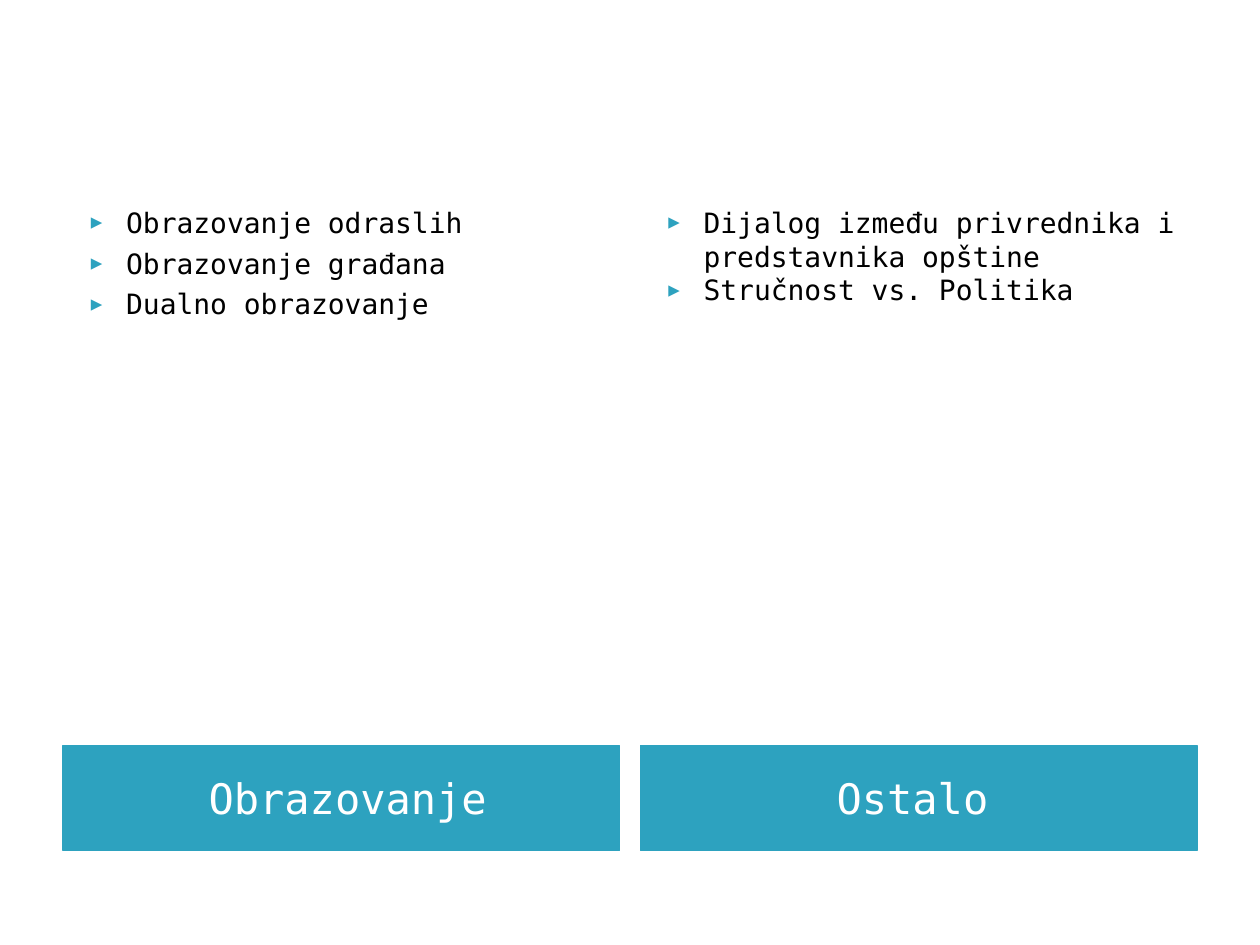
from lxml import etree
from pptx import Presentation, util as u
from pptx.dml.color import RGBColor
from pptx.enum import text
from pptx.oxml.ns import qn

FONT = "DejaVu Sans Mono"
HUES = {"teal": "2DA2BF", "white": "FFFFFF", "black": "000000"}

# Column grid, in centimetres
LEFT, WIDE, GAP = 1.27, 11.22, 0.42

# Heading, space before later items in points, items
COLS = [
    ("Obrazovanje", 4,
     ["Obrazovanje odraslih", "Obrazovanje građana", "Dualno obrazovanje"]),
    ("Ostalo ", 0,
     ["Dijalog između privrednika i predstavnika opštine",
      "Stručnost vs. Politika"]),
]


def hue(name):
    return RGBColor.from_string(HUES[name])


def place(box, col, top, tall):
    box.left, box.top = u.Cm(LEFT + col * (WIDE + GAP)), u.Cm(top)
    box.width, box.height = u.Cm(WIDE), u.Cm(tall)
    frame = box.text_frame
    frame.word_wrap = True
    frame.auto_size = text.MSO_AUTO_SIZE.NONE
    return frame


def write(para, words, size, color, gap=0):
    para.space_before = u.Pt(gap)
    run = para.add_run()
    run.text = words
    font = run.font
    font.name, font.size, font.bold = FONT, u.Pt(size), False
    font.color.rgb = hue(color)


def bullet(para):
    props = para._p.get_or_add_pPr()
    props.set("marL", str(u.Cm(1.02)))
    props.set("indent", str(u.Cm(-0.71)))
    tint = etree.SubElement(props, qn("a:buClr"))
    etree.SubElement(tint, qn("a:srgbClr"), val=HUES["teal"])
    etree.SubElement(props, qn("a:buSzPct"), val="68000")
    etree.SubElement(props, qn("a:buFont"), typeface=FONT)
    etree.SubElement(props, qn("a:buChar"), char="▶")


def banner(box, col, words):
    frame = place(box, col, 15.03, 2.12)
    box.fill.solid()
    box.fill.fore_color.rgb = hue("teal")
    box.line.color.rgb = hue("teal")
    box.line.width = u.Pt(0.75)
    frame.vertical_anchor = text.MSO_ANCHOR.MIDDLE
    frame.margin_left, frame.margin_right = u.Cm(0.51), u.Cm(0.25)
    frame.margin_top = frame.margin_bottom = u.Cm(0.13)
    para = frame.paragraphs[0]
    para.alignment = text.PP_ALIGN.CENTER
    write(para, words, 24, "white")


def points(box, col, items, gap):
    frame = place(box, col, 4.02, 10.95)
    frame.vertical_anchor = text.MSO_ANCHOR.TOP
    for i, words in enumerate(items):
        para = frame.add_paragraph() if i else frame.paragraphs[0]
        bullet(para)
        write(para, words, 16, "black", gap if i else 0)


def main():
    deck = Presentation()
    deck.slide_width, deck.slide_height = u.Cm(25.4), u.Cm(19.05)

    # Comparison layout, without its title
    slide = deck.slides.add_slide(deck.slide_layouts[4])
    title = slide.shapes.title._element
    title.getparent().remove(title)

    # Each column: list above, heading banner below
    slots = {p.placeholder_format.idx: p for p in slide.placeholders}
    for col, (head, gap, items) in enumerate(COLS):
        banner(slots[2 * col + 1], col, head)
        points(slots[2 * col + 2], col, items, gap)

    deck.save("out.pptx")


if __name__ == "__main__":
    main()
